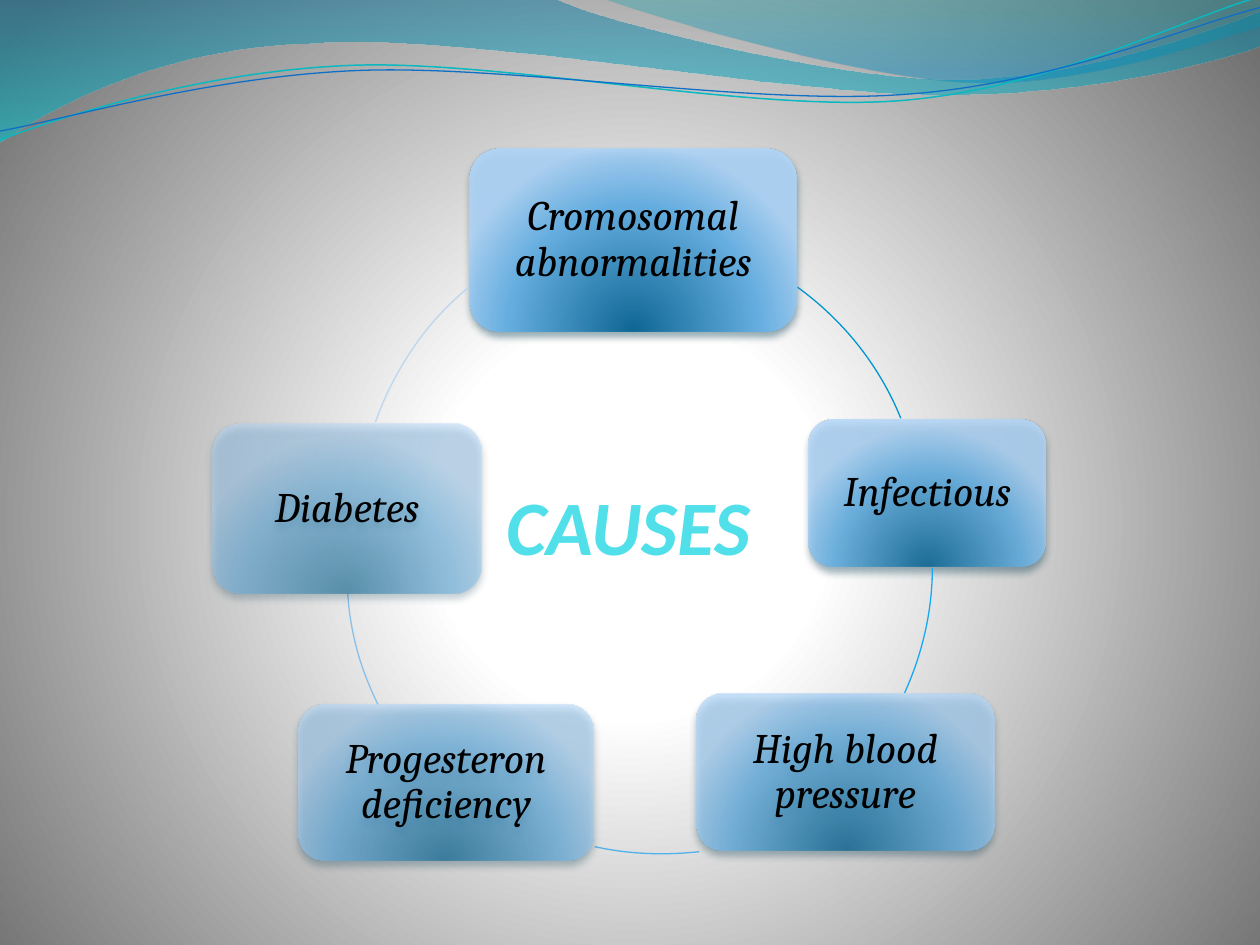
from dataclasses import dataclass
from math import cos, radians, sin

from lxml import etree
from pptx import Presentation
from pptx.dml.color import RGBColor
from pptx.enum.shapes import MSO_SHAPE
from pptx.enum.text import MSO_ANCHOR, MSO_AUTO_SIZE, PP_ALIGN
from pptx.oxml.ns import qn
from pptx.util import Inches, Pt

ROUNDED = MSO_SHAPE.ROUNDED_RECTANGLE
MIDDLE, BOTTOM = MSO_ANCHOR.MIDDLE, MSO_ANCHOR.BOTTOM
CENTER = PP_ALIGN.CENTER
NO_AUTOFIT = MSO_AUTO_SIZE.NONE
RING_SIZE = 4.97
WAVE_TILT = 357.3


@dataclass(frozen=True)
class Theme:
    title_font: str = "Calibri"
    title_size: float = 44
    title_color: str = "51E0EA"
    cause_font: str = "Cambria"
    cause_size: float = 24
    cause_color: str = "000000"
    shadow: str = "00374C"
    background: tuple = ((0, "FFFFFF", 100), (25, "FFFFFF", 100), (100, "707070", 100))
    cause_stops: tuple = ((0, "006091"), (68, "64B1E7"), (100, "B1D6F9"))
    back_wave: tuple = ((0, "0074A1", 45), (100, "00C6CF", 55))
    front_wave: tuple = ((0, "00A1A9", 30), (80, "008BBF", 45))
    teal_line: str = "0AB8BF"
    blue_line: str = "0F6FC6"


THEME = Theme()

WAVES = [
    (THEME.back_wave, (-0.01, -0.01, 10.02, 1.14), [
        (0, 0), (4.4, -0.01), (4.76, 0.17, 6.64, 0.63, 7.58, 0.63),
        (8.53, 0.63, 9.58, 0.26, 10, 0.09), (10.01, 0.36),
        (9.83, 0.44, 8.7, 0.76, 7.46, 0.75), (6.22, 0.75, 3.82, 0.28, 2.57, 0.34),
        (1.29, 0.36, 0.46, 0.83, -0.01, 1.13), (0, 0)]),
    (THEME.front_wave, (4.79, -0.01, 5.21, 0.7), [
        (4.79, -0.01), (5.09, 0.11, 6.82, 0.62, 7.69, 0.65),
        (8.56, 0.69, 9.61, 0.32, 10, 0.21), (10, 0), (4.79, -0.01)]),
]
WAVE_LINES = [
    (THEME.teal_line, 0.85, (-0.02, 0.22, 10.02, 0.71), [
        (0, 1.11), (0.48, 0.93, 1.58, 0.57, 2.77, 0.52),
        (3.95, 0.47, 5.93, 0.89, 7.13, 0.8), (8.33, 0.71, 9.38, 0.15, 9.98, -0.02)]),
    (THEME.blue_line, 0.75, (-0.02, 0.3, 10.03, 0.58), [
        (0, 1.04), (0.47, 0.96, 1.64, 0.61, 2.83, 0.56),
        (4.03, 0.51, 5.97, 0.84, 7.17, 0.75), (8.36, 0.67, 9.41, 0.21, 10, 0.06)]),
]
CAUSES = [
    ("Cromosomal abnormalities", (3.73, 1.18, 2.59, 1.45), 90),
    ("Infectious", (6.42, 3.33, 1.88, 1.17), 80),
    ("High blood pressure", (5.53, 5.51, 2.36, 1.24), 70),
    ("Progesteron deficiency", (2.37, 5.59, 2.34, 1.24), 60),
    ("Diabetes", (1.69, 3.36, 2.13, 1.35), 50),
]
RING_ARCS = [
    ("0096CF", (2.38, 1.8), [(6.33, 2.28), (6.69, 2.54, 6.98, 2.9, 7.15, 3.32)]),
    ("14A9F2", (2.44, 1.98), [(7.4, 4.51), (7.4, 4.85, 7.32, 5.19, 7.18, 5.5)]),
    ("51B1EB", (2.75, 1.81), [(5.55, 6.76), (5.27, 6.79, 4.99, 6.78, 4.72, 6.72)]),
    ("89C0E9", (2.75, 2.01), [(3, 5.59), (2.86, 5.31, 2.78, 5.02, 2.76, 4.71)]),
    ("BCD6ED", (2.84, 1.69), [(2.98, 3.35), (3.13, 2.93, 3.38, 2.56, 3.72, 2.28)]),
]


def add_child(parent, tag, **attributes):
    values = {name: str(value) for name, value in attributes.items()}
    return etree.SubElement(parent, qn(tag), values)


def add_color(parent, color, opacity):
    node = add_child(parent, "a:srgbClr", val=color)
    if opacity < 100:
        add_child(node, "a:alpha", val=opacity * 1000)


def set_gradient(fill, properties, stops, focus=None):
    fill.background()
    empty = properties.find(qn("a:noFill"))
    gradient = etree.Element(qn("a:gradFill"), rotWithShape="1")
    stop_list = add_child(gradient, "a:gsLst")
    for position, color, opacity in stops:
        add_color(add_child(stop_list, "a:gs", pos=position * 1000), color, opacity)
    if focus:
        circle = add_child(gradient, "a:path", path="circle")
        sides = {side: value * 1000 for side, value in zip("ltrb", focus)}
        add_child(circle, "a:fillToRect", **sides)
    else:
        add_child(gradient, "a:lin", ang=90 * 60000, scaled=0)
    properties.replace(empty, gradient)


def add_shadow(shape):
    effects = shape._element.spPr.find(qn("a:effectLst"))
    shadow = add_child(effects, "a:outerShdw", blurRad=Pt(4.5), dist=Pt(3),
                       dir=90 * 60000, rotWithShape=0)
    add_color(shadow, THEME.shadow, 48)


def local_point(x, y, frame, rotation):
    left, top, width, height = frame
    across, down = x - left - width / 2, y - top - height / 2
    angle = radians(-rotation)
    return (Inches(width / 2 + across * cos(angle) - down * sin(angle)),
            Inches(height / 2 + across * sin(angle) + down * cos(angle)))


def add_outline(page, frame, segments, rotation=0, closed=False):
    left, top, width, height = frame
    builder = page.shapes.build_freeform(Inches(left), Inches(top))
    builder.add_line_segments([(Inches(left + width), Inches(top + height))], close=closed)
    shape = builder.convert_to_shape()
    shape.rotation = rotation
    shape.shadow.inherit = False
    outline = shape._element.spPr.find(".//" + qn("a:path"))
    for step in list(outline):
        outline.remove(step)
    for index, values in enumerate(segments):
        tag = "a:cubicBezTo" if len(values) == 6 else "a:lnTo" if index else "a:moveTo"
        step = add_child(outline, tag)
        for x, y in zip(values[::2], values[1::2]):
            across, down = local_point(x, y, frame, rotation)
            add_child(step, "a:pt", x=across, y=down)
    if closed:
        add_child(outline, "a:close")
    return shape


def add_wave(page, stops, frame, segments):
    wave = add_outline(page, frame, segments, closed=True)
    set_gradient(wave.fill, wave._element.spPr, stops)
    wave.line.fill.background()


def add_curve(page, color, width, frame, segments, rotation=0):
    curve = add_outline(page, frame, segments, rotation)
    curve.fill.background()
    curve.line.color.rgb = RGBColor.from_string(color)
    curve.line.width = Pt(width)


def add_text(para, text, font, size, color, bold):
    para.alignment = CENTER
    span = para.add_run()
    span.text = text
    span.font.name = font
    span.font.size = Pt(size)
    span.font.bold = bold
    span.font.italic = True
    span.font.color.rgb = RGBColor.from_string(color)


def set_frame(frame, anchor, margins):
    frame.word_wrap = True
    frame.auto_size = NO_AUTOFIT
    frame.vertical_anchor = anchor
    frame.margin_left, frame.margin_top, frame.margin_right, frame.margin_bottom = (
        Inches(margin) for margin in margins)


def add_cause(page, text, place, opacity):
    box = page.shapes.add_shape(ROUNDED, *(Inches(value) for value in place))
    stops = [(position, color, opacity) for position, color in THEME.cause_stops]
    set_gradient(box.fill, box._element.spPr, stops, (50, 130, 50, -30))
    box.line.fill.background()
    box.shadow.inherit = False
    add_shadow(box)
    set_frame(box.text_frame, MIDDLE, [0.17] * 4)
    para = box.text_frame.paragraphs[0]
    para.line_spacing = 0.9
    add_text(para, text, THEME.cause_font, THEME.cause_size, THEME.cause_color, False)


def set_title(page, text):
    title = page.shapes.title
    title.left, title.top = Inches(3.42), Inches(3.59)
    title.width, title.height = Inches(3.16), Inches(0.94)
    set_frame(title.text_frame, BOTTOM, (0, 0, 0.02, 0))
    add_text(title.text_frame.paragraphs[0], text, THEME.title_font,
             THEME.title_size, THEME.title_color, True)


def set_background(page):
    fill = page.background.fill
    fill.background()
    properties = page._element.find(".//" + qn("p:bgPr"))
    set_gradient(fill, properties, THEME.background, (10, 110, 10, 100))


def main():
    deck = Presentation()
    deck.slide_width, deck.slide_height = Inches(10), Inches(7.5)
    page = deck.slides.add_slide(deck.slide_layouts[5])
    set_background(page)
    set_title(page, "CAUSES")
    for wave in WAVES:
        add_wave(page, *wave)
    for line in WAVE_LINES:
        add_curve(page, *line, rotation=WAVE_TILT)
    for cause, (color, corner, arc) in zip(CAUSES, RING_ARCS):
        add_cause(page, *cause)
        add_curve(page, color, 0.75, (*corner, RING_SIZE, RING_SIZE), arc)
    deck.save("out.pptx")


if __name__ == "__main__":
    main()
